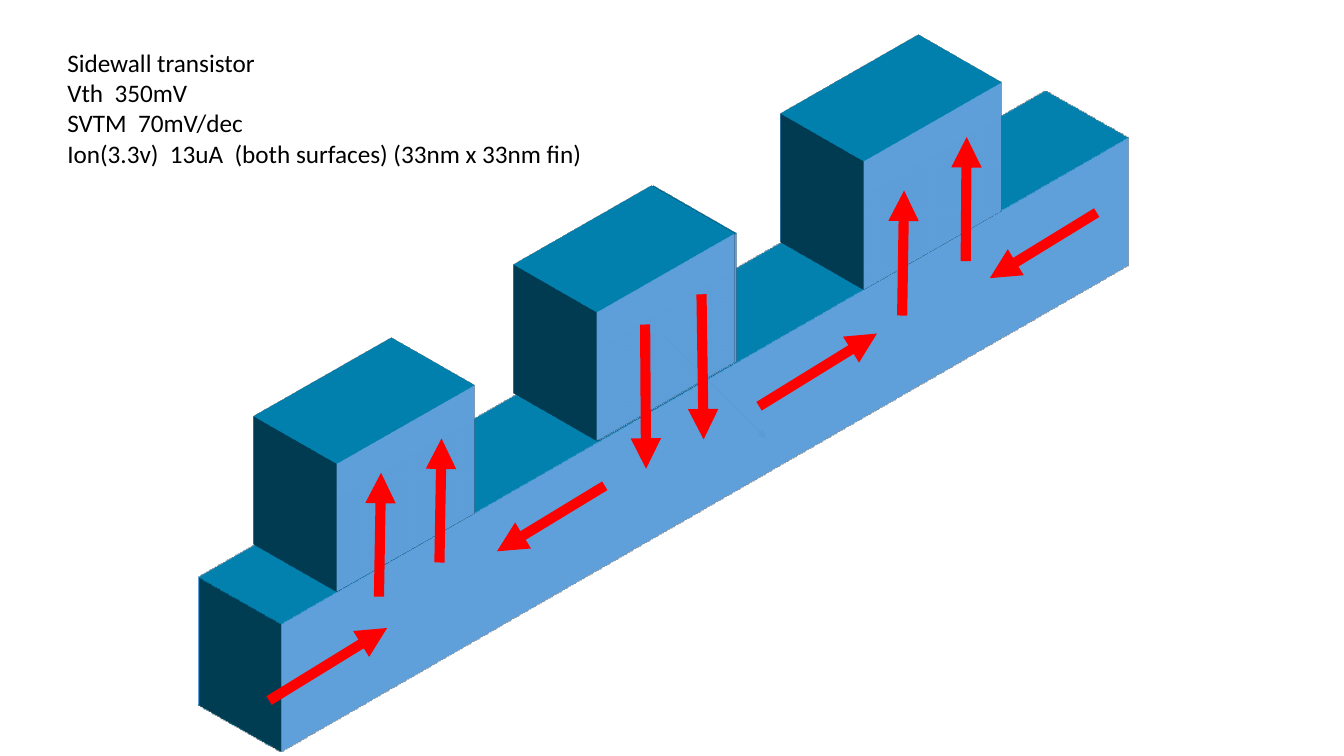
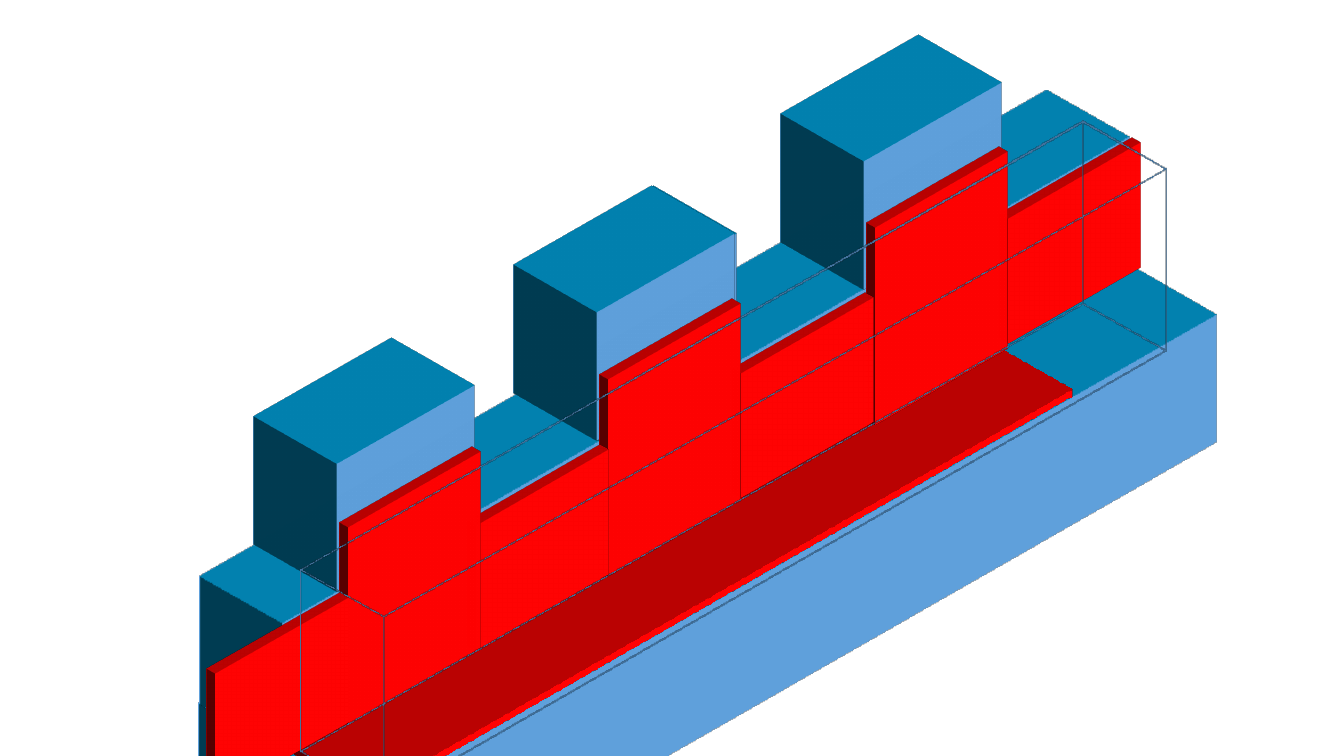
from dataclasses import dataclass, replace

from lxml import etree
from pptx import Presentation
from pptx.dml.color import RGBColor
from pptx.enum.shapes import MSO_CONNECTOR as Connector, MSO_SHAPE as Preset
from pptx.enum.text import MSO_AUTO_SIZE as AutoSize
from pptx.oxml.ns import qn
from pptx.shapes.autoshape import Shape
from pptx.shapes.shapetree import GroupShapes, SlideShapes
from pptx.slide import Slide
from pptx.util import Pt

Canvas = SlideShapes | GroupShapes
Point = tuple[float, float]

COLOURS = {
    "silicon": "5B9BD5",
    "silicon_depth": "00B0F0",
    "edge": "43739E",
    "current": "FF0000",
    "envelope": "00B050",
    "text": "000000",
}
FONT = "Calibri"


@dataclass(frozen=True)
class Block:
    """Front face of an isometric block, before it is turned, and its depth."""
    left: float
    top: float
    width: float
    height: float = 111.6
    depth: float = 84
    face: str = "silicon"
    sides: str = "silicon_depth"
    edged: bool = True
    wireframe: bool = False


@dataclass(frozen=True)
class Arrow:
    start: Point
    end: Point
    colour: str = "current"
    width: float = 7.25


FIN_WIDTH = 856.8
GATE_WIDTH = 139
RAIL = Block(75.6, 262.1, FIN_WIDTH)
LEFT_GATE = Block(220.3, 293, GATE_WIDTH)
MIDDLE_GATE_CORE = Block(407.5, 185, GATE_WIDTH, edged=False)
RIGHT_GATE = Block(596.9, 77, GATE_WIDTH)
MIDDLE_GATE = Block(406.1, 185, GATE_WIDTH)
PLATFORM = Block(138.2, 388.1, FIN_WIDTH, depth=172)
FLOOR_CHANNEL = Block(161.3, 421.2, 708.5, 5.8, face="current", sides="current")
ENVELOPE = Block(158.4, 266.4, 791.3, 159.1, face="envelope",
                 sides="envelope", wireframe=True)

PANEL_WIDTH = 133.9
LOW_PANEL, GATE_PANEL = 108.7, 171.4
PANEL_CORNERS = [  # right to left, low and gate panels in turn
    (700.6, 119.5), (605.5, 120.2), (509.8, 229.7), (414.7, 228.2),
    (320.4, 338.4), (229, 334.1), (134.6, 444.2),
]

ARROWS = [
    Arrow((475.2, 241.2), (547.2, 313.2), "silicon", 0.5),
    Arrow((460.8, 231.8), (461.5, 334.8)),
    Arrow((501.1, 210.2), (502.6, 313.9)),
    Arrow((644.4, 225.4), (645.8, 136.1)),
    Arrow((689.8, 186.5), (690.5, 97.9)),
    Arrow((313.9, 401.8), (315.4, 313.2)),
    Arrow((270.7, 426.2), (272.2, 337.7)),
    Arrow((192.2, 500.4), (276.5, 448.6)),
    Arrow((542.2, 290.2), (626.4, 238.3)),
    Arrow((432, 347), (355, 393.8)),
    Arrow((783.4, 151.9), (707, 198.7)),
]
DEVICE_FACTS = [
    "Sidewall transistor",
    "Vth  350mV",
    "SVTM  70mV/dec",
    "Ion(3.3v)  13uA  (both surfaces) (33nm x 33nm fin)",
]


def rgb(name: str) -> RGBColor:
    return RGBColor.from_string(COLOURS[name])


def extrude(shape: Shape, block: Block) -> None:
    """Turn the flat face to an isometric view and give it depth."""
    properties = shape._element.spPr
    scene = etree.SubElement(properties, qn("a:scene3d"))
    etree.SubElement(scene, qn("a:camera"), prst="isometricRightUp")
    etree.SubElement(scene, qn("a:lightRig"), rig="threePt", dir="t")
    solid = etree.SubElement(properties, qn("a:sp3d"), extrusionH=str(Pt(block.depth)))
    if block.wireframe:
        solid.set("prstMaterial", "legacyWireframe")
    colour = etree.SubElement(solid, qn("a:extrusionClr"))
    etree.SubElement(colour, qn("a:srgbClr"), val=COLOURS[block.sides])


def draw_block(canvas: Canvas, block: Block) -> None:
    shape = canvas.add_shape(Preset.RECTANGLE, Pt(block.left), Pt(block.top),
                             Pt(block.width), Pt(block.height))
    shape.shadow.inherit = False
    shape.fill.solid()
    shape.fill.fore_color.rgb = rgb(block.face)
    if block.wireframe:
        tint = shape._element.spPr.find(qn("a:solidFill")).find(qn("a:srgbClr"))
        etree.SubElement(tint, qn("a:alpha"), val="15000")
    if block.edged:
        shape.line.color.rgb = rgb("edge")
        shape.line.width = Pt(1)
    else:
        shape.line.fill.background()
    extrude(shape, block)


def draw_arrow(slide: Slide, arrow: Arrow) -> None:
    connector = slide.shapes.add_connector(
        Connector.STRAIGHT, *(Pt(value) for value in (*arrow.start, *arrow.end)))
    connector.line.color.rgb = rgb(arrow.colour)
    connector.line.width = Pt(arrow.width)
    outline = connector._element.spPr.find(qn("a:ln"))
    etree.SubElement(outline, qn("a:tailEnd"), type="triangle")
    etree.SubElement(connector._element.spPr, qn("a:effectLst"))


def sidewall_panels() -> list[Block]:
    return [
        Block(left, top, PANEL_WIDTH, GATE_PANEL if index % 2 else LOW_PANEL,
              depth=9, face="current", sides="current")
        for index, (left, top) in enumerate(PANEL_CORNERS)
    ]


def write_facts(slide: Slide) -> None:
    box = slide.shapes.add_textbox(Pt(41), Pt(30.2), Pt(386.6), Pt(116.6))
    frame = box.text_frame
    frame.word_wrap = False
    frame.auto_size = AutoSize.SHAPE_TO_FIT_TEXT
    for index, fact in enumerate(DEVICE_FACTS):
        paragraph = frame.add_paragraph() if index else frame.paragraphs[0]
        run = paragraph.add_run()
        run.text = fact
        run.font.name = FONT
        run.font.size = Pt(18)
        run.font.color.rgb = rgb("text")


def build_current_slide(slide: Slide) -> None:
    fin = slide.shapes.add_group_shape()
    for block in (RAIL, LEFT_GATE, MIDDLE_GATE_CORE, RIGHT_GATE):
        draw_block(fin.shapes, block)
    draw_block(slide.shapes, MIDDLE_GATE)
    for arrow in ARROWS:
        draw_arrow(slide, arrow)
    write_facts(slide)


def build_channel_slide(slide: Slide) -> None:
    rail = replace(RAIL, left=76.3, top=261.4)
    for block in (PLATFORM, rail, MIDDLE_GATE_CORE, RIGHT_GATE, MIDDLE_GATE, LEFT_GATE,
                  FLOOR_CHANNEL, *sidewall_panels(), ENVELOPE):
        draw_block(slide.shapes, block)


def main() -> None:
    deck = Presentation()
    deck.slide_width, deck.slide_height = Pt(960), Pt(540)
    blank = deck.slide_layouts[6]
    for build in (build_current_slide, build_channel_slide):
        build(deck.slides.add_slide(blank))
    deck.save("out.pptx")


if __name__ == "__main__":
    main()
